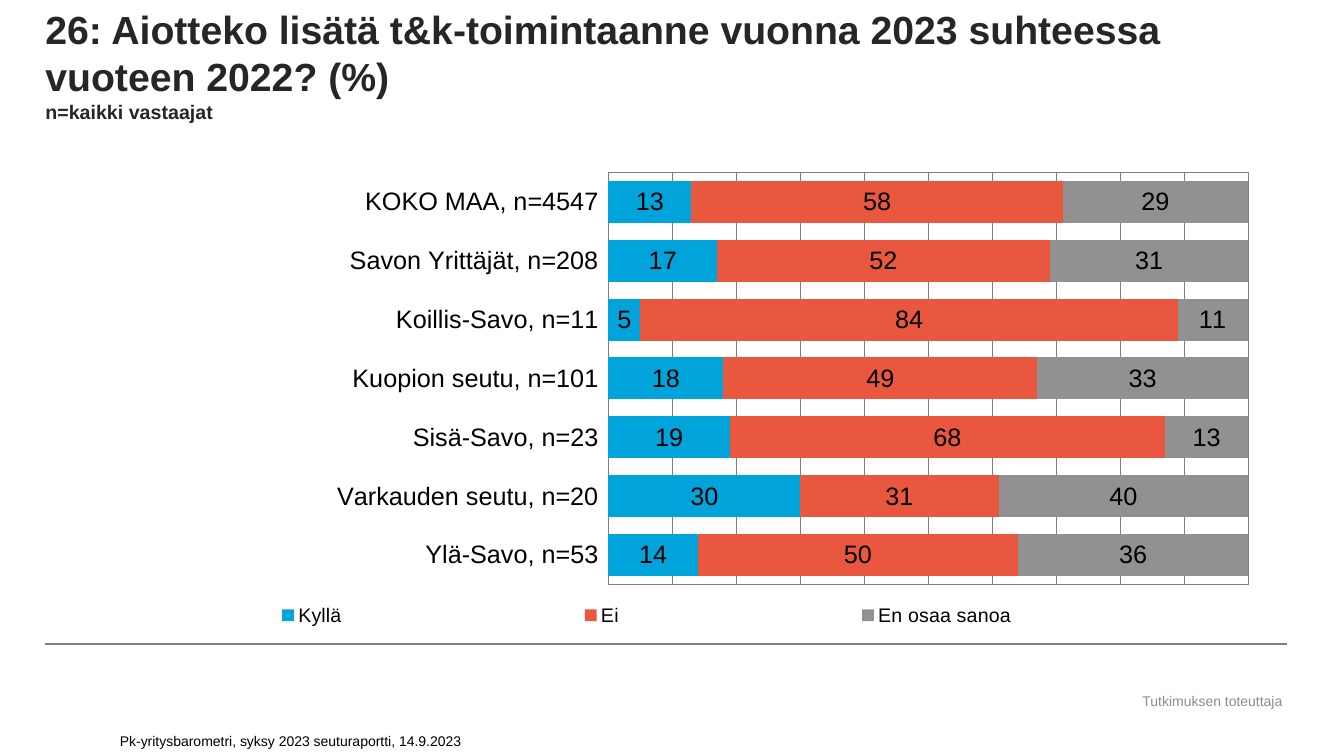
from copy import deepcopy

from pptx import Presentation
from pptx.chart.data import CategoryChartData
from pptx.dml.color import RGBColor
from pptx.enum.chart import XL_CHART_TYPE, XL_LABEL_POSITION, XL_LEGEND_POSITION, XL_TICK_LABEL_POSITION, XL_TICK_MARK
from pptx.enum.shapes import MSO_CONNECTOR
from pptx.enum.text import MSO_ANCHOR, MSO_AUTO_SIZE, PP_ALIGN
from pptx.oxml import parse_xml
from pptx.oxml.ns import nsdecls, qn
from pptx.util import Emu, Pt

EMU_PER_PX = 9144
BLACK = RGBColor(0x00, 0x00, 0x00)
TITLE_INK = RGBColor(0x26, 0x26, 0x26)
CREDIT_GRAY = RGBColor(0x8C, 0x8C, 0x8C)
RULE_GRAY = RGBColor(0x80, 0x80, 0x80)
YES_BLUE = RGBColor(0x00, 0xA3, 0xDA)
NO_RED = RGBColor(0xE9, 0x57, 0x3F)
UNSURE_GRAY = RGBColor(0x91, 0x91, 0x91)

REGIONS = ["KOKO MAA, n=4547", "Savon Yrittäjät, n=208", "Koillis-Savo, n=11",
           "Kuopion seutu, n=101", "Sisä-Savo, n=23", "Varkauden seutu, n=20",
           "Ylä-Savo, n=53"]
ANSWERS = [
    ("Kyllä", [13, 17, 5, 18, 19, 30, 14], YES_BLUE),
    ("Ei", [58, 52, 84, 49, 68, 31, 50], NO_RED),
    ("En osaa sanoa", [29, 31, 11, 33, 13, 40, 36], UNSURE_GRAY),
]


def px(*lengths):
    return [Emu(length * EMU_PER_PX) for length in lengths]


def place(element, index, x, y, w, h, inner=False):
    for old in element.findall(qn("c:layout")):
        element.remove(old)
    target = '<c:layoutTarget val="inner"/>' if inner else ""
    element.insert(index, parse_xml(
        f'<c:layout {nsdecls("c")}><c:manualLayout>{target}'
        '<c:xMode val="edge"/><c:yMode val="edge"/>'
        f'<c:x val="{x}"/><c:y val="{y}"/><c:w val="{w}"/><c:h val="{h}"/>'
        '</c:manualLayout></c:layout>'))


class BarometerSlide:
    font_name = "Arial"

    def __init__(self, presentation):
        self.slide = presentation.slides.add_slide(presentation.slide_layouts[5])

    def style(self, font, size, color, bold=False):
        font.name = self.font_name
        font.size = Pt(size)
        font.color.rgb = color
        font.bold = bold

    def run(self, paragraph, text, size, color, bold=False):
        run = paragraph.add_run()
        run.text = text
        self.style(run.font, size, color, bold)
        return run

    def title(self, box, question, base):
        heading = self.slide.shapes.title
        heading.left, heading.top, heading.width, heading.height = px(*box)
        frame = heading.text_frame
        frame.margin_left = frame.margin_top = frame.margin_right = frame.margin_bottom = 0
        frame.vertical_anchor = MSO_ANCHOR.BOTTOM
        frame.auto_size = MSO_AUTO_SIZE.NONE
        frame.word_wrap = True
        paragraph = frame.paragraphs[0]
        paragraph.alignment = PP_ALIGN.LEFT
        asked = self.run(paragraph, question, 28, TITLE_INK, True)
        paragraph.add_line_break()
        line_break = paragraph._p.find(qn("a:br"))
        line_break.append(deepcopy(asked.font._element))
        self.run(paragraph, base, 14, TITLE_INK, True)

    def text(self, box, words, color, align, anchor):
        frame = self.slide.shapes.add_textbox(*px(*box)).text_frame
        frame.word_wrap = True
        frame.vertical_anchor = anchor
        paragraph = frame.paragraphs[0]
        paragraph.alignment = align
        self.run(paragraph, words, 10, color)

    def rule(self, left, right, y):
        rule = self.slide.shapes.add_connector(MSO_CONNECTOR.STRAIGHT, *px(left, y, right, y))
        rule.line.color.rgb = RULE_GRAY
        rule.line.width = Pt(1.5)
        rule._element.spPr.append(parse_xml(f'<a:effectLst {nsdecls("a")}/>'))

    def stacked_bars(self, box, categories, answers):
        data = CategoryChartData(number_format="#,##0")
        data.categories = categories
        for name, shares, _ in answers:
            data.add_series(name, shares)
        chart = self.slide.shapes.add_chart(XL_CHART_TYPE.BAR_STACKED, *px(*box), data).chart
        self.style(chart.font, 18, BLACK)
        chart.has_title = False

        bars = chart.plots[0]
        bars.gap_width = 40
        bars.overlap = 100
        bars.vary_by_categories = False
        for series, (_, _, color) in zip(bars.series, answers):
            series.format.fill.solid()
            series.format.fill.fore_color.rgb = color
            labels = series.data_labels
            labels.show_value = True
            labels.number_format = "#,##0"
            labels.number_format_is_linked = False
            labels.position = XL_LABEL_POSITION.CENTER
            self.style(labels.font, 18, BLACK)

        regions = chart.category_axis
        regions.reverse_order = True
        regions.major_tick_mark = XL_TICK_MARK.NONE
        regions.tick_label_position = XL_TICK_LABEL_POSITION.LOW
        regions.format.line.color.rgb = RULE_GRAY
        percent = chart.value_axis
        percent.minimum_scale, percent.maximum_scale, percent.major_unit = 0, 100, 10
        percent.has_major_gridlines = True
        percent.major_gridlines.format.line.color.rgb = RULE_GRAY
        percent.major_gridlines.format.line.width = Pt(0.75)
        percent.visible = False

        chart.has_legend = True
        chart.legend.position = XL_LEGEND_POSITION.RIGHT
        chart.legend.include_in_layout = False
        self.style(chart.legend.font, 14, BLACK)
        place(chart.legend._element, 1, 0, 0.93, 0.97, 0.07)

        plot_area = chart._chartSpace.find(".//" + qn("c:plotArea"))
        place(plot_area, 0, 0.454, 0.034, 0.516, 0.866, inner=True)
        plot_area.append(parse_xml(
            f'<c:spPr {nsdecls("c", "a")}><a:noFill/><a:ln w="9525"><a:solidFill>'
            f'<a:srgbClr val="{RULE_GRAY}"/></a:solidFill></a:ln></c:spPr>'))


def main():
    presentation = Presentation()
    presentation.slide_width, presentation.slide_height = px(1333, 750)
    page = BarometerSlide(presentation)
    page.title((45, 0, 1230, 122),
               "26: Aiotteko lisätä t&k-toimintaanne vuonna 2023 suhteessa vuoteen 2022? (%)",
               "n=kaikki vastaajat")
    page.stacked_bars((45, 155, 1230, 472), REGIONS, ANSWERS)
    page.rule(45, 1276, 639)
    page.text((1116, 682, 173, 26), "Tutkimuksen toteuttaja",
              CREDIT_GRAY, PP_ALIGN.CENTER, MSO_ANCHOR.MIDDLE)
    page.text((109, 713, 541, 35), "Pk-yritysbarometri, syksy 2023 seuturaportti, 14.9.2023",
              BLACK, PP_ALIGN.LEFT, MSO_ANCHOR.BOTTOM)
    presentation.save("out.pptx")


if __name__ == "__main__":
    main()
